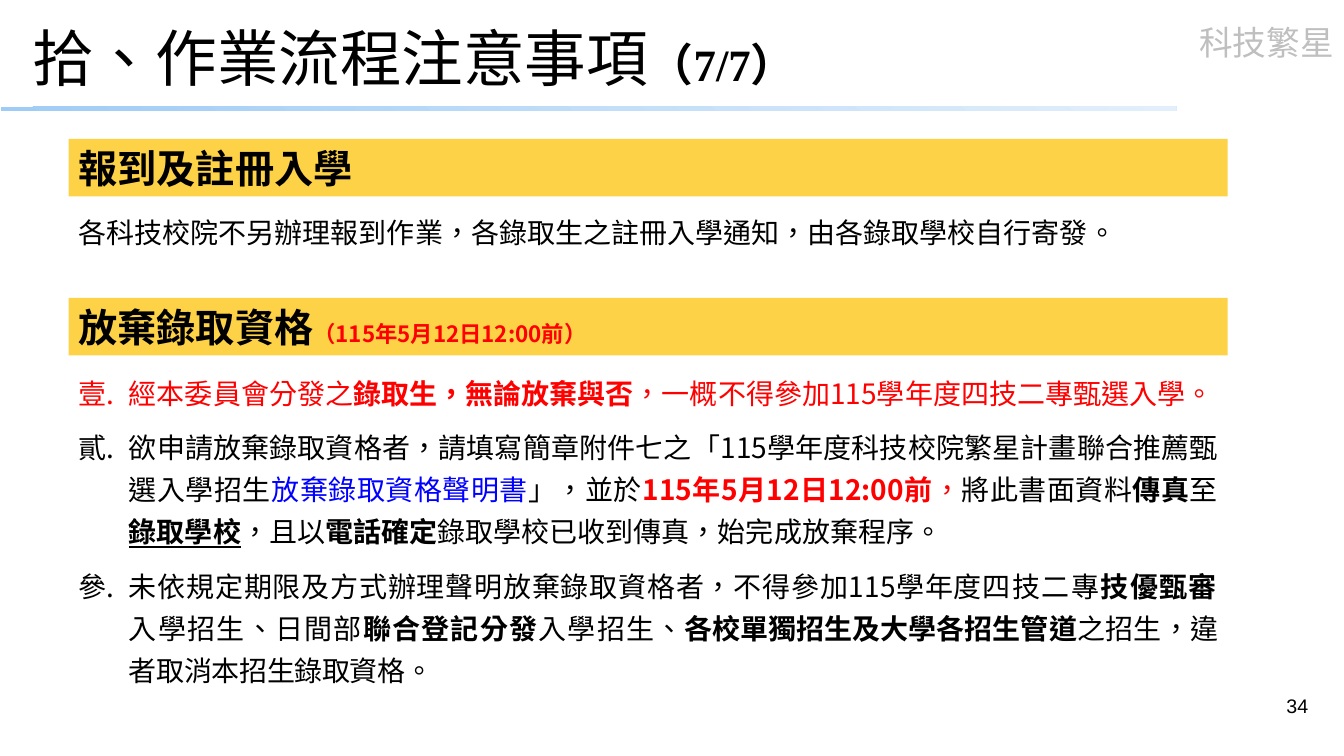
from dataclasses import dataclass
from typing import Optional, Sequence

from lxml import etree
from pptx import Presentation
from pptx import util as u
from pptx.dml.color import RGBColor
from pptx.enum import lang, shapes, text
from pptx.oxml import ns

COLOURS = {
    "ink": "000000",
    "alert": "FF0000",
    "form": "0000FF",
    "band": "FDD247",
    "programme": "BFBFBF",
    "rule_start": "9FCCF6",
    "rule_end": "E2EEFB",
}
BODY_FONT = "Noto Sans CJK SC"
HEADING_FONT = "Noto Sans CJK JP"
LEFT, WIDTH = 1.73, 29.21
BAND_HEIGHT = 1.45
HANGING = u.Cm(1.27)


@dataclass(frozen=True)
class Span:
    words: str
    colour: Optional[str] = None
    bold: Optional[bool] = None
    underline: Optional[bool] = None
    size: Optional[float] = None
    latin_font: Optional[str] = None
    spacing: float = 0


@dataclass(frozen=True)
class Style:
    size: float
    font: str = BODY_FONT
    colour: str = "ink"
    bold: Optional[bool] = None
    align: text.PP_ALIGN = text.PP_ALIGN.LEFT


@dataclass(frozen=True)
class Band:
    top: float
    spans: Sequence[Span]


BANDS = (
    Band(3.5, [Span("報到及註冊入學")]),
    Band(7.51, [Span("放棄錄取資格"),
                Span("（115年5月12日12:00前）", "alert", size=16)]),
)
REGISTRATION = [Span("各科技校院不另辦理報到作業，各錄取生之註冊入學通知，由各錄取學校自行寄發。")]
RULES = (
    [
        Span("經本委員會分發之", "alert"),
        Span("錄取生，無論放棄與否", "alert", True),
        Span("，一概不得參加115學年度四技二專甄選入學。", "alert"),
    ],
    [
        Span("欲申請放棄錄取資格者，請填寫簡章附件七之「115學年度科技校院繁星計畫聯合推薦甄選入學招生"),
        Span("放棄錄取資格聲明書", "form"),
        Span("」，並於"),
        Span("115年5月12日12:00前", "alert", True),
        Span("，", "alert"),
        Span("將此書面資料"),
        Span("傳真", bold=True),
        Span("至"),
        Span("錄取學校", bold=True, underline=True),
        Span("，且以"),
        Span("電話確定", bold=True),
        Span("錄取學校已收到傳真，始完成放棄程序。"),
    ],
    [
        Span("未依規定期限及方式辦理聲明放棄錄取資格者，不得參加115學年度"),
        Span("四技二專", spacing=0.5),
        Span("技優甄審", bold=True, spacing=0.5),
        Span("入學招生、日間部", spacing=0.5),
        Span("聯合登記分發", bold=True, spacing=0.5),
        Span("入學招生", spacing=0.5),
        Span("、"),
        Span("各校單獨招生及大學各招生管道", bold=True, spacing=-0.3),
        Span("之招生，違者取消本招生錄取資格", spacing=-0.3),
        Span("。"),
    ],
)


def rgb(name: str) -> RGBColor:
    return RGBColor.from_string(COLOURS[name])


def write(paragraph, spans: Sequence[Span], style: Style) -> None:
    """Fill a paragraph with Traditional Chinese spans in a shared style."""
    paragraph.alignment = style.align
    font = paragraph.font
    font.size = u.Pt(style.size)
    font.bold = style.bold
    font.color.rgb = rgb(style.colour)
    font.name = style.font
    latin = paragraph._p.pPr.find(ns.qn("a:defRPr")).find(ns.qn("a:latin"))
    latin.addnext(etree.Element(ns.qn("a:ea"), typeface=style.font))
    for span in spans:
        run = paragraph.add_run()
        run.text = span.words
        run.font.language_id = lang.MSO_LANGUAGE_ID.TRADITIONAL_CHINESE
        run.font.bold = span.bold
        run.font.underline = span.underline
        if span.colour:
            run.font.color.rgb = rgb(span.colour)
        if span.size:
            run.font.size = u.Pt(span.size)
        if span.latin_font:
            run.font.name = span.latin_font
        if span.spacing:
            run._r.get_or_add_rPr().set("spc", str(round(span.spacing * 100)))


def place(shape, left: float, top: float, width: float, height: float) -> None:
    shape.left, shape.top = u.Cm(left), u.Cm(top)
    shape.width, shape.height = u.Cm(width), u.Cm(height)


def add_text(slide, left: float, top: float, width: float, height: float):
    frame = slide.shapes.add_textbox(*map(u.Cm, (left, top, width, height))).text_frame
    frame.word_wrap = True
    return frame


def add_bar(slide, left: float, top: float, width: float, height: float):
    bar = slide.shapes.add_shape(
        shapes.MSO_SHAPE.RECTANGLE, *map(u.Cm, (left, top, width, height)))
    bar.shadow.inherit = False
    bar.line.fill.background()
    return bar


def add_title_rule(slide) -> None:
    fill = add_bar(slide, 0.03, 2.69, 29.62, 0.1).fill
    fill.gradient()
    fill.gradient_angle = 45
    for stop, colour, position in zip(
            fill.gradient_stops, ("rule_start", "rule_end"), (0, 1)):
        stop.color.rgb = rgb(colour)
        stop.position = position


def add_band(slide, band: Band) -> None:
    bar = add_bar(slide, LEFT, band.top, WIDTH, BAND_HEIGHT)
    bar.fill.solid()
    bar.fill.fore_color.rgb = rgb("band")
    bar.text_frame.word_wrap = True
    bar.text_frame.vertical_anchor = text.MSO_ANCHOR.TOP
    write(bar.text_frame.paragraphs[0], band.spans, Style(28, bold=True))


def add_rules(slide, style: Style) -> None:
    frame = add_text(slide, LEFT, 9.14, WIDTH, 8.99)
    for index, spans in enumerate(RULES):
        paragraph = frame.add_paragraph() if index else frame.paragraphs[0]
        paragraph.line_spacing = u.Pt(30)
        paragraph.space_after = u.Pt(6)
        if index:
            paragraph.space_before = u.Pt(3)
        properties = paragraph._p.get_or_add_pPr()
        properties.set("marL", str(HANGING))
        properties.set("indent", str(-HANGING))
        properties.set("hangingPunct", "0")
        etree.SubElement(properties, ns.qn("a:buFont"), typeface="+mj-lt")
        etree.SubElement(properties, ns.qn("a:buAutoNum"), type="ea1ChtPeriod")
        write(paragraph, spans, style)


def main() -> None:
    deck = Presentation()
    deck.slide_width, deck.slide_height = u.Cm(33.87), u.Cm(19.05)
    slide = deck.slides.add_slide(deck.slide_layouts[5])

    add_title_rule(slide)
    programme = add_text(slide, 27.86, 0.43, 6, 1.27)
    write(programme.paragraphs[0], [Span("科技繁星")],
          Style(24, HEADING_FONT, "programme", align=text.PP_ALIGN.RIGHT))

    title = slide.shapes.title
    place(title, 0.56, 0.56, 28.68, 1.75)
    title.text_frame.vertical_anchor = text.MSO_ANCHOR.MIDDLE
    title.text_frame.auto_size = text.MSO_AUTO_SIZE.NONE
    write(title.text_frame.paragraphs[0],
          [Span("拾、作業流程注意事項"),
           Span("（7/7）", bold=True, size=32, latin_font="Times New Roman")],
          Style(44, HEADING_FONT))

    page_number = add_text(slide, 25.32, 17.35, 7.9, 1.32)
    write(page_number.paragraphs[0], [Span("34")],
          Style(14, "Arial", align=text.PP_ALIGN.RIGHT))

    body = Style(20, align=text.PP_ALIGN.JUSTIFY)
    registration = add_text(slide, LEFT, 5.31, WIDTH, 2.21)
    write(registration.paragraphs[0], REGISTRATION, body)
    add_rules(slide, body)
    for band in BANDS:
        add_band(slide, band)

    deck.save("out.pptx")


if __name__ == "__main__":
    main()
